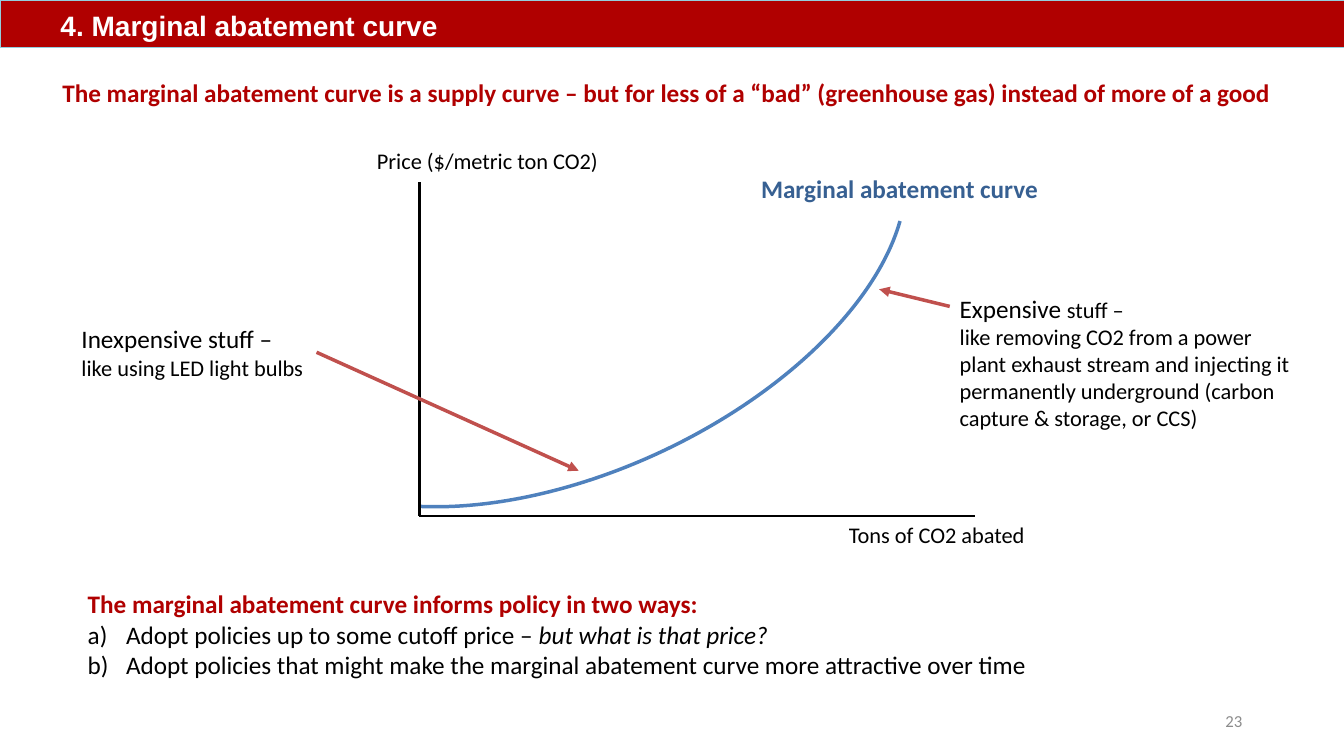
import pptx
import pptx.dml.color
import pptx.enum.dml
import pptx.enum.shapes
import pptx.enum.text
import pptx.oxml.ns
import pptx.util
from lxml import etree

Inches = pptx.util.Inches
Pt = pptx.util.Pt
RGBColor = pptx.dml.color.RGBColor
Align = pptx.enum.text.PP_ALIGN
Anchor = pptx.enum.text.MSO_ANCHOR
qn = pptx.oxml.ns.qn

RED = RGBColor(0xB0, 0x00, 0x00)
PALE_BLUE = RGBColor(0x93, 0xCD, 0xDD)
CURVE_BLUE = RGBColor(0x4F, 0x81, 0xBD)
LABEL_BLUE = RGBColor(0x37, 0x60, 0x92)
ARROW_RED = RGBColor(0xC0, 0x50, 0x4D)
GRAY = RGBColor(0x8C, 0x8C, 0x8C)
BLACK = RGBColor(0x00, 0x00, 0x00)
WHITE = RGBColor(0xFF, 0xFF, 0xFF)

presentation = pptx.Presentation()
presentation.slide_width = Inches(13.33)
presentation.slide_height = Inches(7.5)
slide = presentation.slides.add_slide(presentation.slide_layouts[1])
shapes = slide.shapes


def add_label(bounds, lines, size=16, color=BLACK, bold=False):
    """Add a text box with one paragraph for each line."""
    label = shapes.add_textbox(*map(Inches, bounds))
    label.text_frame.word_wrap = True
    label.text_frame.text = "\n".join(lines)
    for paragraph in label.text_frame.paragraphs:
        paragraph.font.name = "Calibri"
        paragraph.font.size = Pt(size)
        paragraph.font.bold = bold
        paragraph.font.color.rgb = color
    return label


def add_line(start, end, color, width, arrow=False):
    line = shapes.add_connector(
        pptx.enum.shapes.MSO_CONNECTOR.STRAIGHT, *map(Inches, start + end))
    line.line.color.rgb = color
    line.line.width = Pt(width)
    if arrow:
        etree.SubElement(line.line._get_or_add_ln(), qn("a:tailEnd"), type="triangle")
    etree.SubElement(line._element.spPr, qn("a:effectLst"))
    return line


# Title bar
title = shapes.title
title.left, title.top, title.width, title.height = map(Inches, (0, 0, 13.33, 0.47))
title.fill.solid()
title.fill.fore_color.rgb = RED
title.line.color.rgb = PALE_BLUE
title.line.width = Pt(0.5)
title.text_frame.text = "4. Marginal abatement curve"
title.text_frame.auto_size = pptx.enum.text.MSO_AUTO_SIZE.NONE
title.text_frame.vertical_anchor = Anchor.BOTTOM
title.text_frame.margin_left = Inches(0.6)
paragraph = title.text_frame.paragraphs[0]
paragraph.alignment = Align.LEFT
paragraph.font.name = "Arial"
paragraph.font.size = Pt(20)
paragraph.font.bold = True
paragraph.font.color.rgb = WHITE

headline = add_label(
    (0.52, 0.72, 12.29, 0.4),
    ["The marginal abatement curve is a supply curve – but for less of a “bad” "
     "(greenhouse gas) instead of more of a good"],
    18, RED, True)
headline.text_frame.word_wrap = False

# Diagram
curve = shapes.add_shape(
    pptx.enum.shapes.MSO_SHAPE.ARC,
    Inches(2.32), Inches(0.94), Inches(6.89), Inches(3.72))
curve.rotation = 335
curve.adjustments[0] = 8.48
curve.adjustments[1] = 90.6
curve.fill.background()
curve.line.color.rgb = CURVE_BLUE
curve.line.width = Pt(2.5)
curve.shadow.inherit = False

origin = (4.16, 5.12)
for axis_end in ((4.16, 1.81), (9.67, 5.12)):
    add_line(axis_end, origin, BLACK, 2)

add_label((7.45, 1.67, 3.87, 0.4), ["Marginal abatement curve"], 18, LABEL_BLUE, True)
add_label((8.32, 5.12, 3.03, 0.37), ["Tons of CO2 abated"])
add_label((3.64, 1.41, 3.03, 0.37), ["Price ($/metric ton CO2)"])

inexpensive = add_label((0.71, 3.16, 2.43, 0.67),
                        ["Inexpensive stuff –\vlike using LED light bulbs"])
inexpensive.text_frame.paragraphs[0].runs[0].font.size = Pt(18)
inexpensive_arrow = add_line((3.14, 3.5), (5.74, 4.67), ARROW_RED, 2.5, arrow=True)
inexpensive_arrow.begin_connect(inexpensive, 3)

expensive = add_label(
    (9.42, 2.86, 3.6, 1.48),
    ["Expensive ",
     "like removing CO2 from a power plant exhaust stream and injecting it "
     "permanently underground (carbon capture & storage, or CCS)"])
paragraph = expensive.text_frame.paragraphs[0]
paragraph.runs[0].font.size = Pt(18)
paragraph.add_run().text = "stuff –"
add_line((9.42, 3.04), (8.72, 2.87), ARROW_RED, 2.5, arrow=True)

# Policy list
policies = slide.placeholders[1]
policies.left, policies.top, policies.width, policies.height = map(
    Inches, (0.77, 5.79, 9.93, 1.01))
policies.text_frame.text = "\n".join([
    "The marginal abatement curve informs policy in two ways:",
    "Adopt policies up to some cutoff price – ",
    "Adopt policies that might make the marginal abatement curve more attractive over time",
])
policies.text_frame.auto_size = pptx.enum.text.MSO_AUTO_SIZE.NONE
for index, paragraph in enumerate(policies.text_frame.paragraphs):
    is_heading = index == 0
    indent = 0 if is_heading else Inches(0.38)
    paragraph.space_before = Pt(0)
    properties = paragraph._p.get_or_add_pPr()
    properties.set("marL", str(indent))
    properties.set("indent", str(-indent))
    if is_heading:
        etree.SubElement(properties, qn("a:buNone"))
    else:
        etree.SubElement(properties, qn("a:buFont"), typeface="+mj-lt")
        etree.SubElement(properties, qn("a:buAutoNum"), type="alphaLcParenR")
    paragraph.font.name = "Calibri"
    paragraph.font.size = Pt(18)
    paragraph.font.bold = is_heading
    paragraph.font.color.rgb = RED if is_heading else BLACK
question = policies.text_frame.paragraphs[1].add_run()
question.text = "but what is that price?"
question.font.italic = True

page_number = add_label((9.42, 6.95, 3, 0.4), ["23"], 12, GRAY)
page_number.text_frame.vertical_anchor = Anchor.MIDDLE
page_number.text_frame.paragraphs[0].alignment = Align.RIGHT

presentation.save("out.pptx")
